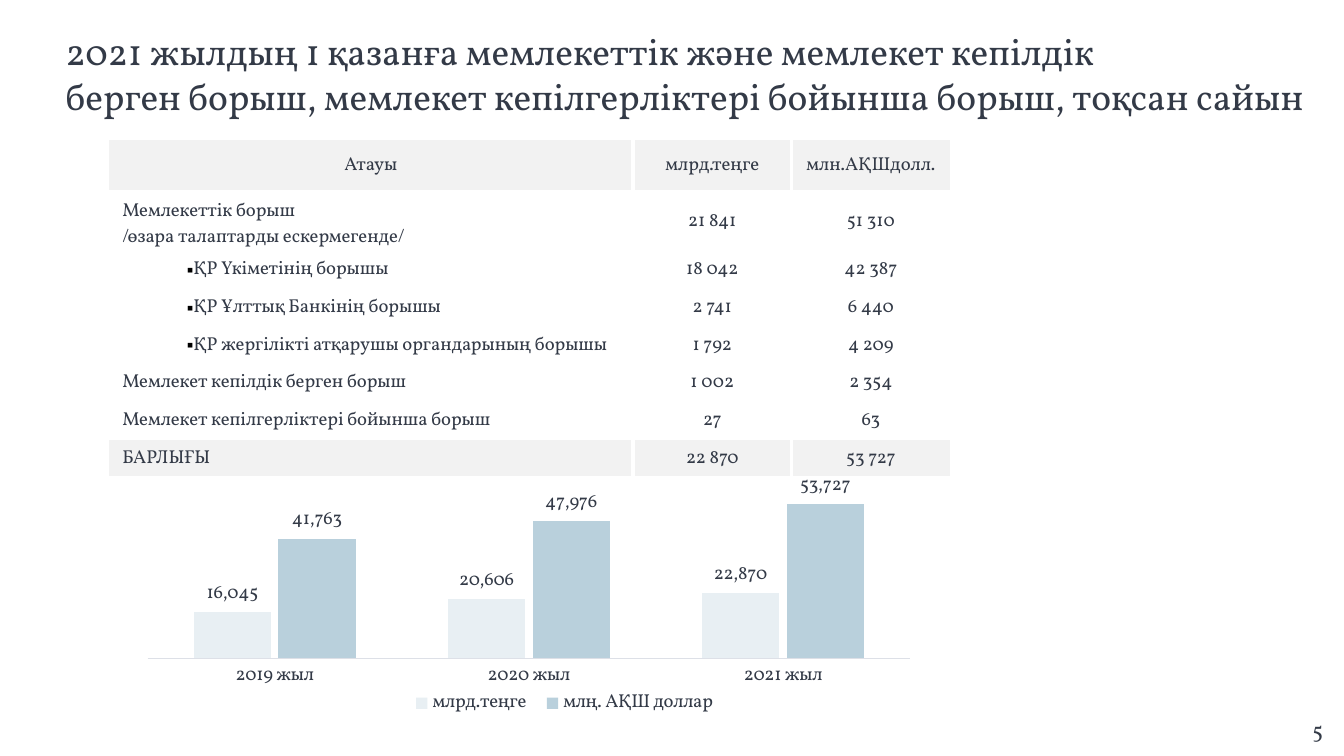
from lxml import etree
from pptx import Presentation
from pptx import util as u
from pptx.chart.data import CategoryChartData
from pptx.dml.color import RGBColor
from pptx.enum import chart as ch, text as tx
from pptx.oxml.ns import qn

FONT = "Vollkorn"
INK = RGBColor(0x33, 0x3A, 0x47)
BAND = RGBColor(0xF2, 0xF2, 0xF2)
AXIS = RGBColor(0xDD, 0xE0, 0xE7)
PALE = RGBColor(0xE8, 0xEF, 0xF3)
BLUE = RGBColor(0xB9, 0xD0, 0xDC)
MID = tx.PP_ALIGN.CENTER
PLAIN = "{2D5ABB26-0587-4C30-8999-92F81FD0307C}"  # table style without grid

TITLE = ["2021 жылдың 1 қазанға мемлекеттік және мемлекет кепілдік",
         "берген борыш, мемлекет кепілгерліктері бойынша борыш, тоқсан сайын"]
PAGE = "5"
ROWS = [
    ("Атауы", "млрд.теңге", "млн.АҚШдолл."),
    ("Мемлекеттік борыш\n/өзара талаптарды ескермегенде/", "21 841", "51 310"),
    ("ҚР Үкіметінің борышы", "18 042", "42 387"),
    ("ҚР Ұлттық Банкінің борышы", "2 741", "6 440"),
    ("ҚР жергілікті атқарушы органдарының борышы", "1 792", "4 209"),
    ("Мемлекет кепілдік берген борыш", "1 002", "2 354"),
    ("Мемлекет кепілгерліктері бойынша борыш", "27", "63"),
    ("БАРЛЫҒЫ", "22 870", "53 727"),
]
BULLETS = (2, 3, 4)
WIDTHS = [3.9, 1.18, 1.18]
HEIGHTS = [0.39, 0.39] + [0.28] * 6
YEARS = ["2019 жыл", "2020 жыл", "2021 жыл"]
SERIES = [("млрд.теңге", (16045, 20606, 22870), PALE),
          ("млң. АҚШ доллар", (41763, 47976, 53727), BLUE)]


def style(font, size):
    font.name, font.size, font.bold = FONT, u.Pt(size), False
    font.color.rgb = INK


def write(frame, lines, size, align=None):
    """Fill a text frame, one paragraph per line, and return the paragraphs."""
    for i, line in enumerate(lines):
        para = frame.add_paragraph() if i else frame.paragraphs[0]
        para.alignment = align
        run = para.add_run()
        run.text = line
        style(run.font, size)
    return frame.paragraphs


def indent(para, left, first):
    props = para._p.get_or_add_pPr()
    props.set("marL", str(u.Inches(left)))
    props.set("indent", str(u.Inches(first)))
    return props


def bullet(para):
    props = indent(para, 0.28, 0.2)
    color = etree.SubElement(props, qn("a:buClr"))
    etree.SubElement(color, qn("a:srgbClr"), val="000000")
    etree.SubElement(props, qn("a:buFont"), typeface="Arial")
    etree.SubElement(props, qn("a:buChar"), char="▪")


def border(cell, sides):
    props = cell._tc.get_or_add_tcPr()
    for side in sides:
        line = etree.SubElement(props, qn("a:ln" + side), w=str(u.Pt(2.25)))
        fill = etree.SubElement(line, qn("a:solidFill"))
        etree.SubElement(fill, qn("a:srgbClr"), val="FFFFFF")


def add_box(slide, left, top, width, height):
    box = slide.shapes.add_textbox(*map(u.Inches, (left, top, width, height)))
    box.text_frame.word_wrap = True
    box.text_frame.vertical_anchor = tx.MSO_ANCHOR.MIDDLE
    return box.text_frame


def add_debts(slide):
    shape = slide.shapes.add_table(
        len(ROWS), len(WIDTHS), u.Inches(0.81), u.Inches(1.04),
        u.Inches(sum(WIDTHS)), u.Inches(sum(HEIGHTS)))
    table = shape.table
    table.first_row = table.horz_banding = False
    table._tbl.tblPr.find(qn("a:tableStyleId")).text = PLAIN
    for col, width in zip(table.columns, WIDTHS):
        col.width = u.Inches(width)
    last, end = len(ROWS) - 1, len(WIDTHS) - 1
    for r, row in enumerate(ROWS):
        table.rows[r].height = u.Inches(HEIGHTS[r])
        for c, words in enumerate(row):
            cell = table.cell(r, c)
            band = r in (0, last)
            if band or c > 0:
                inner = {"L": c > 0, "R": c < end, "T": r > 0, "B": r < last}
                border(cell, [side for side, on in inner.items() if on])
            cell.vertical_anchor = tx.MSO_ANCHOR.MIDDLE
            if band:
                cell.fill.solid()
                cell.fill.fore_color.rgb = BAND
            else:
                cell.fill.background()
            centred = r == 0 or c > 0
            paras = write(cell.text_frame, words.split("\n"), 10,
                          MID if centred else None)
            if r in BULLETS and c == 0:
                bullet(paras[0])


def place(part, spots):
    """Give a legend or plot area a manual layout in fractions of the chart."""
    for old in part.findall(qn("c:layout")):
        part.remove(old)
    layout = etree.Element(qn("c:layout"))
    before = part.find(qn("c:legendPos"))
    part.insert(0 if before is None else 1, layout)
    manual = etree.SubElement(layout, qn("c:manualLayout"))
    if before is None:
        etree.SubElement(manual, qn("c:layoutTarget"), val="inner")
    for tag in ("xMode", "yMode"):
        etree.SubElement(manual, qn("c:" + tag), val="edge")
    for tag, val in zip("xywh", spots):
        etree.SubElement(manual, qn("c:" + tag), val=str(val))


def add_bars(slide):
    data = CategoryChartData(number_format="#,##0")
    data.categories = YEARS
    for name, vals, _ in SERIES:
        data.add_series(name, vals)
    chart = slide.shapes.add_chart(
        ch.XL_CHART_TYPE.COLUMN_CLUSTERED,
        *map(u.Inches, (0.98, 3.52, 5.91, 1.97)), data).chart
    style(chart.font, 10)
    chart.has_title = False
    chart.has_legend = True
    chart.legend.position = ch.XL_LEGEND_POSITION.BOTTOM
    chart.legend.include_in_layout = False

    years = chart.category_axis
    years.major_tick_mark = ch.XL_TICK_MARK.NONE
    years.format.line.color.rgb = AXIS
    years.format.line.width = u.Pt(0.75)
    scale = chart.value_axis
    scale.minimum_scale, scale.maximum_scale = 0, 60000
    scale.has_major_gridlines = False
    scale.visible = False

    plot = chart.plots[0]
    plot.gap_width, plot.overlap = 120, -10
    plot.vary_by_categories = False
    for bars, (_, _, color) in zip(plot.series, SERIES):
        bars.format.fill.solid()
        bars.format.fill.fore_color.rgb = color
        tags = bars.data_labels
        tags.show_value = True
        tags.number_format, tags.number_format_is_linked = "#,##0", False
        tags.position = ch.XL_LABEL_POSITION.OUTSIDE_END
        style(tags.font, 10)
    place(chart._chartSpace.chart.plotArea, (0.02, 0.05, 0.96, 0.65))
    place(chart.legend._element, (0.34, 0.82, 0.41, 0.1))


def main():
    deck = Presentation()
    deck.slide_width = u.Inches(10)
    deck.slide_height = deck.slide_width * 9 // 16
    slide = deck.slides.add_slide(deck.slide_layouts[6])

    page = add_box(slide, 9.61, 5.23, 0.39, 0.39)
    page.margin_left = page.margin_right = 0
    page.margin_top = page.margin_bottom = 0
    write(page, [PAGE], 12, MID)

    for para in write(add_box(slide, 0, 0.16, 10, 0.77), TITLE, 20):
        indent(para, 0, 0.39)

    add_debts(slide)
    add_bars(slide)
    deck.save("out.pptx")


if __name__ == "__main__":
    main()
